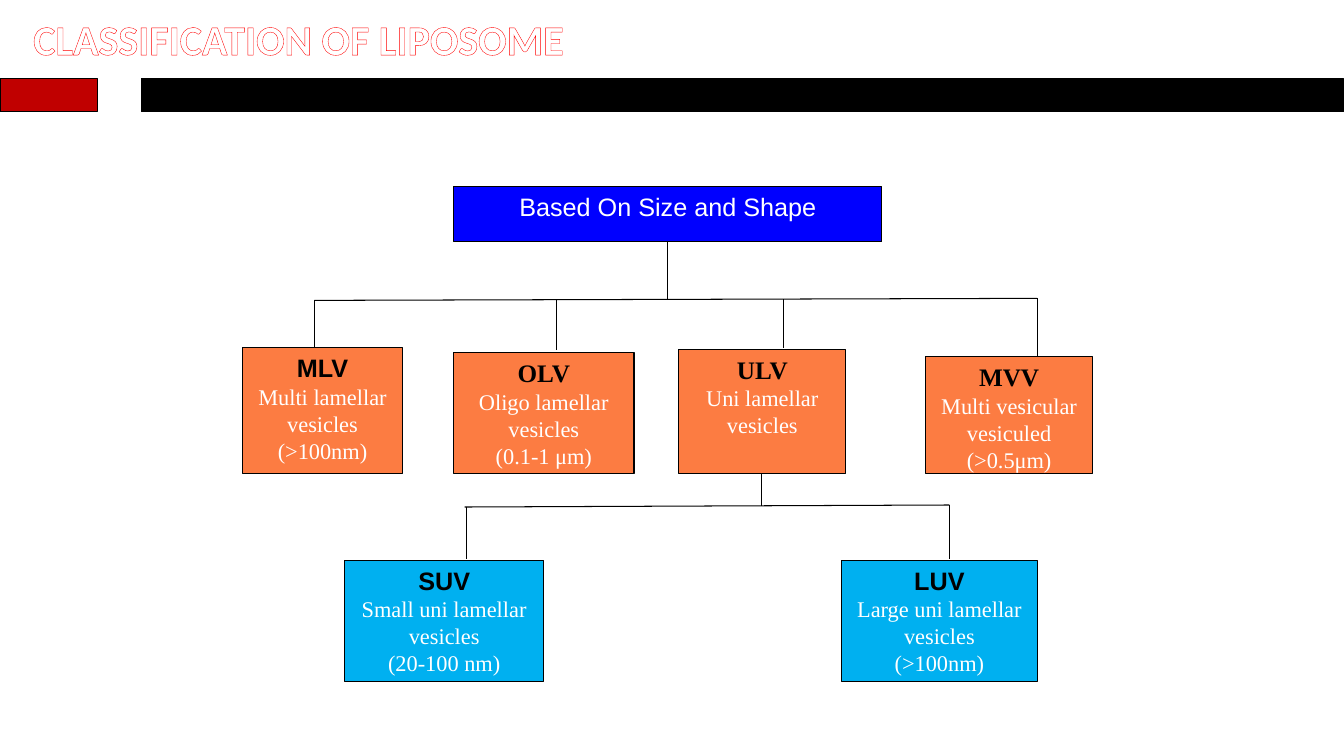
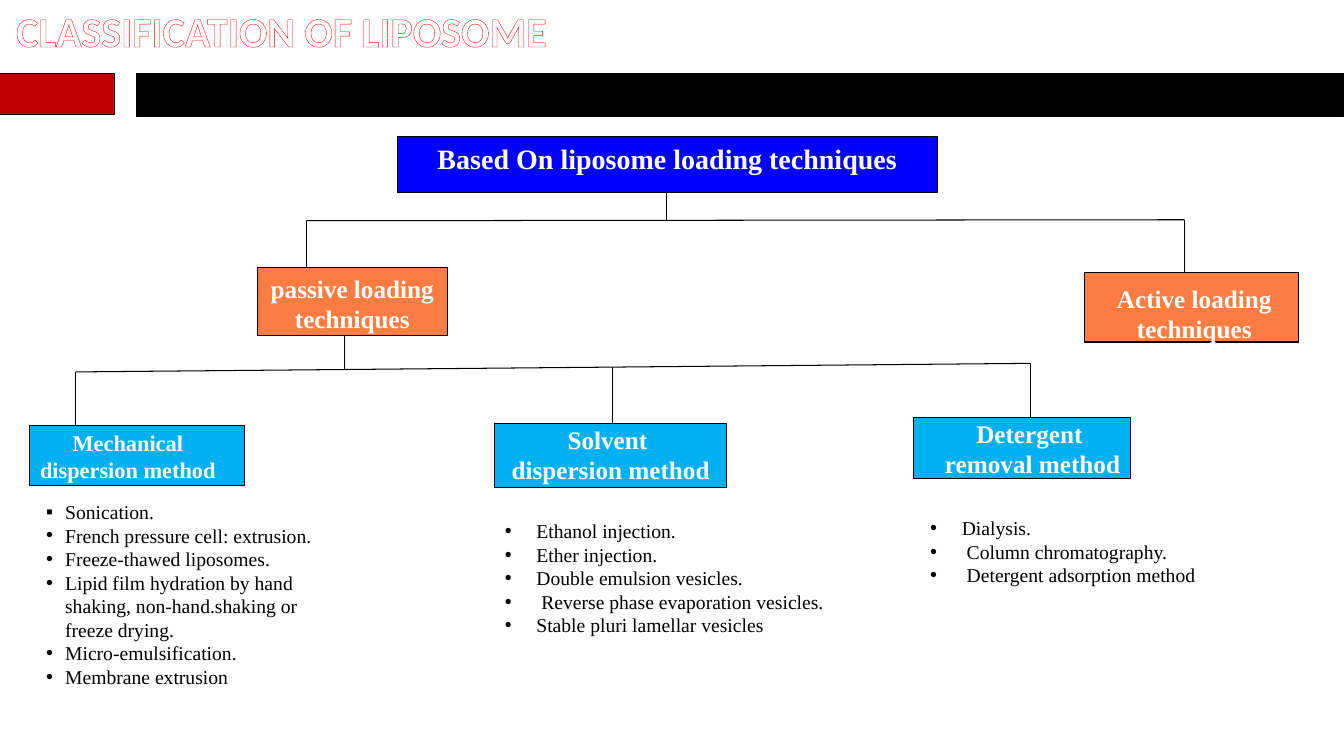
from dataclasses import dataclass
from typing import NamedTuple

import pptx
import pptx.dml.color
import pptx.enum.shapes
import pptx.enum.text
import pptx.oxml
import pptx.oxml.ns
import pptx.util

# The slide is a grid of 80 columns by 45 rows of square cells.
COLUMNS, ROWS = 80, 45
CELL = pptx.util.Inches(7.5) // ROWS

WHITE, BLACK, RED = "FFFFFF", "000000", "C00000"
BLUE, ORANGE, SKY = "0000FF", "FC7C42", "00B0F0"
TITLE_OUTLINE = "FF0000"
SERIF, SANS, TITLE_FONT = "Times New Roman", "Arial", "Calibri"
SIDE_INSET, TOP_INSET = 0.6, 0.3
DRAWING_NS = pptx.oxml.ns.nsdecls("a")
TITLE = "CLASSIFICATION OF LIPOSOME"


class Area(NamedTuple):
    column: float
    row: float
    columns: float
    rows: float


class TextLine(NamedTuple):
    text: str
    size: float
    font: str = SERIF
    color: str = WHITE
    bold: bool = False


@dataclass
class Node:
    area: Area
    fill: str
    lines: list[TextLine]
    shift: tuple[float, float] = (0, 0)


class Drop(NamedTuple):
    column: float
    bottom: float
    weight: float = 0.75


@dataclass
class Branch:
    """A trunk from a parent node down to a crossbar, with drops to the children."""
    trunk_column: float
    trunk_top: float
    bar_start: tuple[float, float]
    bar_end: tuple[float, float]
    drops: list[Drop]

    def bar_row(self, column: float) -> float:
        (left, left_row), (right, right_row) = self.bar_start, self.bar_end
        return left_row + (right_row - left_row) * (column - left) / (right - left)


@dataclass
class MethodList:
    area: Area
    indent: float
    items: list[str]
    first_bullet: str = "•"


@dataclass
class Chart:
    title_area: Area
    red_band: Area
    black_band: Area
    branches: list[Branch]
    nodes: list[Node]
    lists: list[MethodList]


def cells(count: float) -> int:
    return round(count * CELL)


def rgb(color: str) -> pptx.dml.color.RGBColor:
    return pptx.dml.color.RGBColor.from_string(color)


def add_run(paragraph, line: TextLine):
    run = paragraph.add_run()
    run.text = line.text
    run.font.size = pptx.util.Pt(line.size)
    run.font.name = line.font
    run.font.bold = line.bold
    run.font.color.rgb = rgb(line.color)
    return run


def next_paragraph(frame, index: int):
    return frame.add_paragraph() if index else frame.paragraphs[0]


def add_title(slide, area: Area) -> None:
    title = slide.shapes.title
    title.left, title.top, title.width, title.height = map(cells, area)
    frame = title.text_frame
    frame.auto_size = pptx.enum.text.MSO_AUTO_SIZE.NONE
    frame.vertical_anchor = pptx.enum.text.MSO_ANCHOR.TOP
    paragraph = frame.paragraphs[0]
    paragraph.alignment = pptx.enum.text.PP_ALIGN.LEFT
    run = add_run(paragraph, TextLine(TITLE, 30, TITLE_FONT, bold=True))
    outline = pptx.oxml.parse_xml(
        f'<a:ln {DRAWING_NS} w="{pptx.util.Pt(0.52)}"><a:solidFill>'
        f'<a:srgbClr val="{TITLE_OUTLINE}"/></a:solidFill></a:ln>')
    run.font._element.insert(0, outline)


def add_box(slide, area: Area, fill: str):
    box = slide.shapes.add_shape(
        pptx.enum.shapes.MSO_SHAPE.RECTANGLE, *map(cells, area))
    box.shadow.inherit = False
    box.fill.solid()
    box.fill.fore_color.rgb = rgb(fill)
    box.line.color.rgb = rgb(BLACK)
    box.line.width = pptx.util.Pt(0.75)
    return box


def add_node(slide, node: Node) -> None:
    frame = add_box(slide, node.area, node.fill).text_frame
    frame.word_wrap = True
    frame.vertical_anchor = pptx.enum.text.MSO_ANCHOR.TOP
    across, down = node.shift
    frame.margin_left = cells(SIDE_INSET + across)
    frame.margin_right = cells(SIDE_INSET - across)
    frame.margin_top = cells(TOP_INSET + down)
    for index, line in enumerate(node.lines):
        paragraph = next_paragraph(frame, index)
        paragraph.alignment = pptx.enum.text.PP_ALIGN.CENTER
        add_run(paragraph, line)


def add_line(slide, start: tuple[float, float], end: tuple[float, float],
             weight: float = 0.75) -> None:
    line = slide.shapes.add_connector(
        pptx.enum.shapes.MSO_CONNECTOR.STRAIGHT, *map(cells, (*start, *end)))
    line.line.color.rgb = rgb(BLACK)
    line.line.width = pptx.util.Pt(weight)
    line._element.spPr.append(pptx.oxml.parse_xml(f"<a:effectLst {DRAWING_NS}/>"))


def add_branch(slide, branch: Branch) -> None:
    trunk = branch.trunk_column
    add_line(slide, (trunk, branch.trunk_top), (trunk, branch.bar_row(trunk)))
    add_line(slide, branch.bar_start, branch.bar_end)
    for drop in branch.drops:
        add_line(slide, (drop.column, branch.bar_row(drop.column)),
                 (drop.column, drop.bottom), drop.weight)


def add_method_list(slide, methods: MethodList) -> None:
    frame = slide.shapes.add_textbox(*map(cells, methods.area)).text_frame
    frame.word_wrap = True
    indent = cells(methods.indent)
    for index, item in enumerate(methods.items):
        paragraph = next_paragraph(frame, index)
        properties = paragraph._p.get_or_add_pPr()
        properties.set("marL", str(indent))
        properties.set("indent", str(-indent))
        bullet = "•" if index else methods.first_bullet
        for xml in (f'<a:buFont {DRAWING_NS} typeface="{SANS}"/>',
                    f'<a:buChar {DRAWING_NS} char="{bullet}"/>'):
            properties.append(pptx.oxml.parse_xml(xml))
        add_run(paragraph, TextLine(item, 14, color=BLACK))


def vesicle(area: Area, fill: str, short_name: str, details: list[str],
            font: str = SANS) -> Node:
    heading = TextLine(short_name, 18, font, BLACK, True)
    return Node(area, fill, [heading, *(TextLine(text, 16) for text in details)])


def technique(area: Area, fill: str, texts: list[str], size: float = 18,
              shift: tuple[float, float] = (0, 0)) -> Node:
    return Node(area, fill, [TextLine(text, size, bold=True) for text in texts], shift)


SIZE_AND_SHAPE = Chart(
    title_area=Area(1.38, 0.48, 52.56, 3.66),
    red_band=Area(0, 4.7, 5.8, 1.95),
    black_band=Area(8.4, 4.7, COLUMNS - 8.4, 1.95),
    branches=[
        Branch(39.72, 14.4, (18.72, 17.88), (61.74, 17.76),
               [Drop(18.72, 20.7), Drop(33.09, 20.82, 0.5),
                Drop(46.65, 20.7, 0.5), Drop(61.74, 21.24)]),
        Branch(45.3, 28.2, (27.66, 30.18), (56.52, 30.06),
               [Drop(27.78, 33.3), Drop(56.52, 33.3)]),
    ],
    nodes=[
        Node(Area(27, 11.1, 25.5, 3.3), BLUE,
             [TextLine("Based On Size and Shape", 18, SANS)]),
        vesicle(Area(14.46, 20.7, 9.48, 7.48), ORANGE, "MLV",
                ["Multi lamellar vesicles", "(>100nm)"]),
        vesicle(Area(27, 21, 10.74, 7.18), ORANGE, "OLV",
                ["Oligo lamellar vesicles", "(0.1-1 μm)"], SERIF),
        vesicle(Area(40.4, 20.8, 9.96, 7.38), ORANGE, "ULV",
                ["Uni lamellar", "vesicles"], SERIF),
        vesicle(Area(55.1, 21.24, 9.94, 6.94), ORANGE, "MVV",
                ["Multi vesicular vesiculed", "(>0.5μm)"], SERIF),
        vesicle(Area(20.5, 33.36, 11.88, 7.2), SKY, "SUV",
                ["Small uni lamellar vesicles", "(20-100 nm)"]),
        vesicle(Area(50.1, 33.36, 11.64, 7.2), SKY, "LUV",
                ["Large uni lamellar vesicles", "(>100nm)"]),
    ],
    lists=[],
)

LOADING_TECHNIQUES = Chart(
    title_area=Area(0.36, 0, 52.56, 3.66),
    red_band=Area(0, 4.38, 6.84, 2.42),
    black_band=Area(8.15, 4.38, COLUMNS - 8.15, 2.54),
    branches=[
        Branch(39.7, 11.4, (18.24, 13.14), (70.5, 13.08),
               [Drop(18.24, 15.95), Drop(70.5, 16.2)]),
        Branch(20.5, 20, (4.5, 22.14), (61.32, 21.63),
               [Drop(4.5, 25.3), Drop(36.48, 25.2), Drop(61.32, 24.9)]),
    ],
    nodes=[
        technique(Area(23.65, 8.1, 32.16, 3.34), BLUE,
                  ["Based On liposome loading techniques"], 20),
        technique(Area(15.3, 15.95, 11.34, 4.05), ORANGE,
                  ["passive loading techniques"]),
        technique(Area(64.55, 16.2, 12.72, 4.16), ORANGE,
                  ["Active loading techniques"], shift=(0.18, 0.36)),
        technique(Area(1.75, 25.32, 12.8, 3.56), SKY,
                  ["Mechanical dispersion method"], 16, (-0.54, -0.06)),
        technique(Area(29.45, 25.2, 13.8, 3.84), SKY,
                  ["Solvent ", "dispersion method"], shift=(0, -0.24)),
        technique(Area(54.35, 24.88, 12.96, 3.62), SKY,
                  ["Detergent", " removal method"], shift=(0.45, -0.3)),
    ],
    lists=[
        MethodList(Area(2.16, 29.46, 18.96, 11.94), 1.13,
                   ["Sonication.", "French pressure cell: extrusion.",
                    "Freeze-thawed liposomes.",
                    "Lipid film hydration by hand shaking, "
                    "non-hand.shaking or freeze drying.",
                    "Micro-emulsification.", "Membrane extrusion"], "▪"),
        MethodList(Area(29.46, 30.6, 23.22, 7.68), 1.88,
                   ["Ethanol injection.", "Ether injection.",
                    "Double emulsion vesicles.",
                    " Reverse phase evaporation vesicles.",
                    "Stable pluri lamellar vesicles"]),
        MethodList(Area(54.78, 30.42, 21.12, 4.86), 1.88,
                   ["Dialysis.", " Column chromatography.",
                    " Detergent adsorption method"]),
    ],
)


def add_chart_slide(deck, chart: Chart) -> None:
    slide = deck.slides.add_slide(deck.slide_layouts.get_by_name("Title Only"))
    add_title(slide, chart.title_area)
    add_box(slide, chart.red_band, RED)
    add_box(slide, chart.black_band, BLACK)
    for branch in chart.branches:
        add_branch(slide, branch)
    for node in chart.nodes:
        add_node(slide, node)
    for methods in chart.lists:
        add_method_list(slide, methods)


def main() -> None:
    deck = pptx.Presentation()
    deck.slide_width, deck.slide_height = cells(COLUMNS), cells(ROWS)
    for chart in (SIZE_AND_SHAPE, LOADING_TECHNIQUES):
        add_chart_slide(deck, chart)
    deck.save("out.pptx")


if __name__ == "__main__":
    main()
